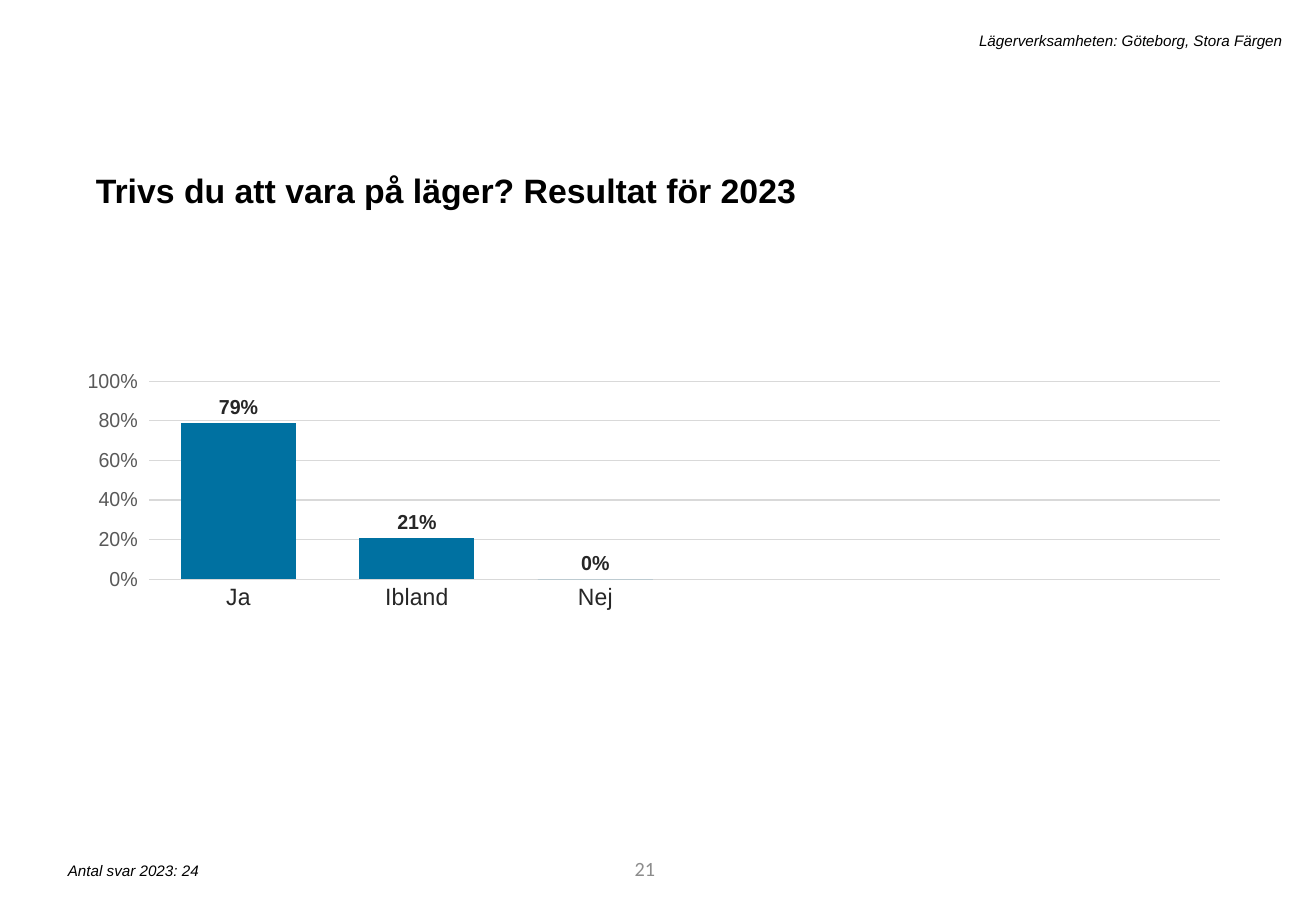
from lxml.etree import SubElement
from pptx import Presentation
from pptx.chart.data import CategoryChartData
from pptx.dml.color import RGBColor as Color
from pptx.enum.chart import XL_CHART_TYPE as ChartType
from pptx.enum.chart import XL_LABEL_POSITION as LabelPosition
from pptx.enum.chart import XL_TICK_MARK as TickMark
from pptx.enum.text import MSO_ANCHOR as Anchor
from pptx.enum.text import PP_ALIGN as Align
from pptx.oxml.ns import qn
from pptx.util import Inches, Pt

THEME = {
    "font": "Arial", "number_font": "Calibri",
    "ink": "000000", "muted": "8C8C8C", "bar": "0071A1",
    "label": "262626", "scale": "595959", "grid": "D9D9D9",
    "title": 20, "category": 14, "value": 12, "base": 10, "note": 9, "number": 12,
}

presentation = Presentation()
presentation.slide_width = Inches(10.83)
presentation.slide_height = Inches(7.5)
width, height = presentation.slide_width, presentation.slide_height
slide = presentation.slides.add_slide(presentation.slide_layouts[6])


def style(font, size, color="ink", name="font", bold=False, italic=False):
    font.name = THEME[name]
    font.size = Pt(THEME[size])
    font.color.rgb = Color.from_string(THEME[color])
    font.bold, font.italic = bold, italic


def add_text(text, box, align=Align.LEFT, **look):
    shape = slide.shapes.add_textbox(*map(Inches, box))
    shape.text_frame.word_wrap = True
    paragraph = shape.text_frame.paragraphs[0]
    paragraph.text = text
    paragraph.alignment = align
    style(paragraph.font, **look)
    return shape.text_frame, paragraph


number_frame, _ = add_text("21", (3.05, 6.95, 2.44, 0.4), Align.RIGHT,
                           size="number", color="muted", name="number_font")
number_frame.vertical_anchor = Anchor.MIDDLE

_, title = add_text("Trivs du att vara på läger? Resultat för 2023",
                    (0.69, 1.28, 9.4, 0.47), size="title", bold=True)
title.line_spacing = 1.2
title.space_before = Pt(10)

add_text("Lägerverksamheten: Göteborg, Stora Färgen",
         (1.79, 0.21, 8.86, 0.25), Align.RIGHT, size="note", italic=True)
add_text("Antal svar 2023: 24", (0.46, 7.04, 4.41, 0.25), size="note", italic=True)

answers = CategoryChartData(number_format="0%")
answers.categories = ["Ja", "Ibland", "Nej", "", "", ""]
answers.add_series("Series 1", [0.79, 0.21, 0, None, None, None])
chart = slide.shapes.add_chart(ChartType.COLUMN_CLUSTERED, Inches(0.72), Inches(2.53),
                               Inches(9.4), Inches(3.95), answers).chart
chart.has_legend = False
chart.has_title = False
style(chart.font, "base")

category_axis = chart.category_axis
category_axis.major_tick_mark = TickMark.NONE
style(category_axis.tick_labels.font, "category", "label")

value_axis = chart.value_axis
value_axis.minimum_scale, value_axis.maximum_scale = 0, 1
value_axis.major_unit = 0.2
value_axis.major_tick_mark = TickMark.OUTSIDE
value_axis.format.line.fill.background()
value_axis.tick_labels.number_format = "0%"
value_axis.tick_labels.number_format_is_linked = False
style(value_axis.tick_labels.font, "value", "scale")

for line in (category_axis.format.line, value_axis.major_gridlines.format.line):
    line.color.rgb = Color.from_string(THEME["grid"])
    line.width = Pt(0.75)

plot = chart.plots[0]
plot.gap_width = 55
plot.vary_by_categories = False
bars = plot.series[0]
bars.format.fill.solid()
bars.format.fill.fore_color.rgb = Color.from_string(THEME["bar"])

labels = bars.data_labels
labels.show_value = True
labels.position = LabelPosition.OUTSIDE_END
labels.number_format = "0%"
labels.number_format_is_linked = False
style(labels.font, "value", "label", bold=True)

plot_area = chart.element.find(".//" + qn("c:plotArea"))
layout = plot_area.find(qn("c:layout"))
if layout is None:
    layout = SubElement(plot_area, qn("c:layout"))
    plot_area.insert(0, layout)
manual = SubElement(layout, qn("c:manualLayout"))
for tag, setting in (("layoutTarget", "inner"), ("xMode", "edge"), ("yMode", "edge"),
                     ("x", "0.025"), ("y", "0.154"), ("w", "0.966"), ("h", "0.413")):
    SubElement(manual, qn("c:" + tag)).set("val", setting)

presentation.save("out.pptx")
